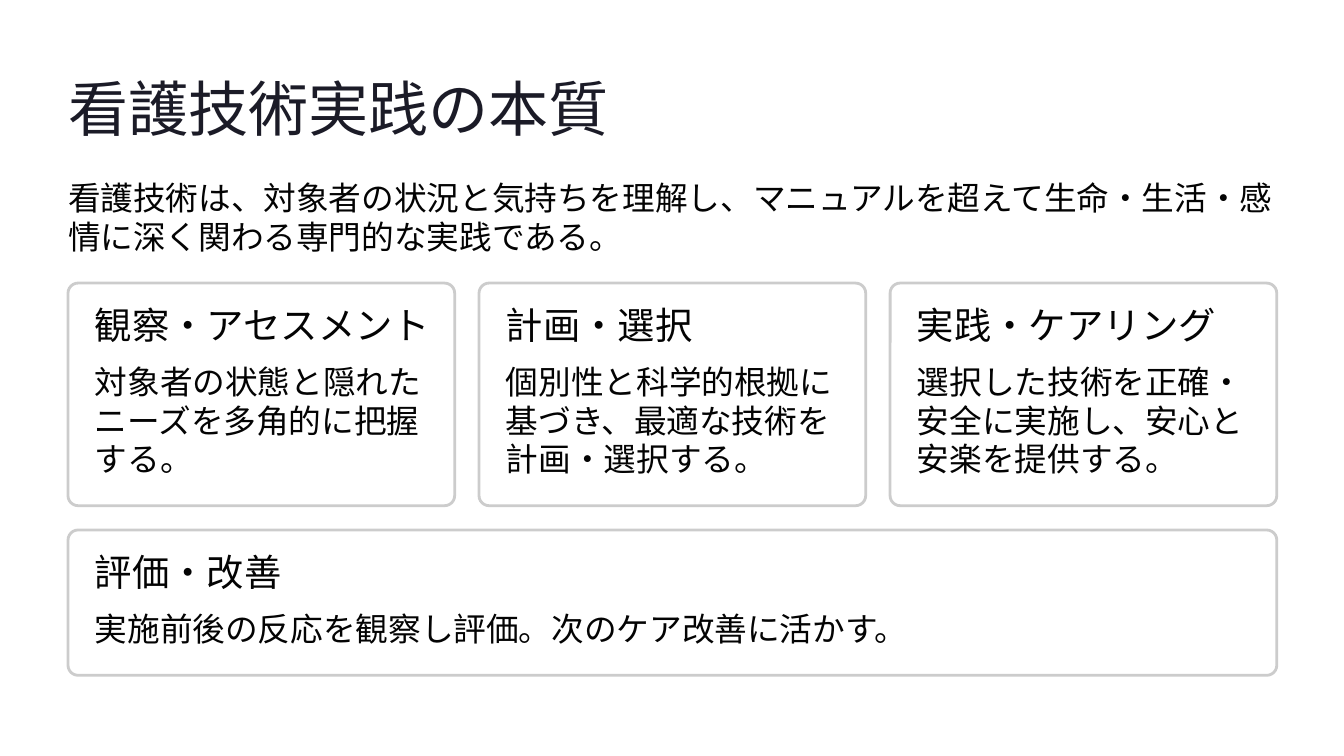
"""Build a slide on the essence of nursing practice with four cards."""
from lxml import etree
from pptx import Presentation
from pptx.dml.color import RGBColor
from pptx.enum.shapes import MSO_SHAPE
from pptx.enum.text import MSO_ANCHOR, MSO_AUTO_SIZE, PP_ALIGN
from pptx.oxml.ns import qn
from pptx.util import Inches, Pt

ROUND = MSO_SHAPE.ROUNDED_RECTANGLE
TOP = MSO_ANCHOR.TOP
LEFT = PP_ALIGN.LEFT
FIXED = MSO_AUTO_SIZE.NONE

COLORS = {"title": "1B1B27", "text": "030303", "card": "FFFFFF", "edge": "CCCCCC"}
MARGIN, WIDTH, GAP, PAD = 0.81, 14.39, 0.29, 0.32
COL = (WIDTH - 2 * GAP) / 3
ROWS = [(3.37, 2.65), (6.31, 1.73)]
RADIUS = 0.12

CARDS = [
    (0, 0, 1, "観察・アセスメント", "対象者の状態と隠れたニーズを多角的に把握する。"),
    (0, 1, 1, "計画・選択", "個別性と科学的根拠に基づき、最適な技術を計画・選択する。"),
    (0, 2, 1, "実践・ケアリング", "選択した技術を正確・安全に実施し、安心と安楽を提供する。"),
    (1, 0, 3, "評価・改善", "実施前後の反応を観察し評価。次のケア改善に活かす。"),
]


def write(box, text, font, size, line, color="text", wrap=True):
    frame = box.text_frame
    frame.margin_left = frame.margin_right = 0
    frame.margin_top = frame.margin_bottom = 0
    frame.auto_size = FIXED
    frame.word_wrap = wrap
    frame.vertical_anchor = TOP
    para = frame.paragraphs[0]
    para.text = text
    para.alignment = LEFT
    para.line_spacing = Pt(line)
    para.font.name = font
    para.font.size = Pt(size)
    para.font.color.rgb = RGBColor.from_string(COLORS[color])


def place(x, y, w, h):
    return [Inches(v) for v in (x, y, w, h)]


deck = Presentation()
deck.slide_width, deck.slide_height = Inches(16), Inches(9)
slide = deck.slides.add_slide(deck.slide_layouts[5])
shapes = slide.shapes

title = shapes.title
title.left, title.top, title.width, title.height = place(MARGIN, 0.81, 7.2, 0.9)
write(title, "看護技術実践の本質", "Inter", 51.5, 64.5, "title", False)

intro = shapes.add_textbox(*place(MARGIN, 2.13, WIDTH, 0.92))
write(intro, "看護技術は、対象者の状況と気持ちを理解し、マニュアルを超えて生命・生活・感情に深く関わる専門的な実践である。", "Lato", 28, 33)

for row, col, span, head, body in CARDS:
    top, high = ROWS[row]
    left = MARGIN + col * (COL + GAP)
    wide = span * COL + (span - 1) * GAP
    card = shapes.add_shape(ROUND, *place(left, top, wide, high))
    card.adjustments[0] = RADIUS / high
    card.shadow.inherit = False
    card.fill.solid()
    card.fill.fore_color.rgb = RGBColor.from_string(COLORS["card"])
    tint = card.fill._xPr.find(".//" + qn("a:srgbClr"))
    etree.SubElement(tint, qn("a:alpha"), val="95000")
    card.line.color.rgb = RGBColor.from_string(COLORS["edge"])
    card.line.width = Pt(2.4)

    label = shapes.add_textbox(*place(left + PAD, top + PAD, 3.6, 0.45))
    write(label, head, "Inter", 32, 32, wrap=False)
    note = shapes.add_textbox(
        *place(left + PAD, top + 0.95, wide - 2 * PAD, high - 0.95 - PAD))
    write(note, body, "Lato", 28, 33)

deck.save("out.pptx")
